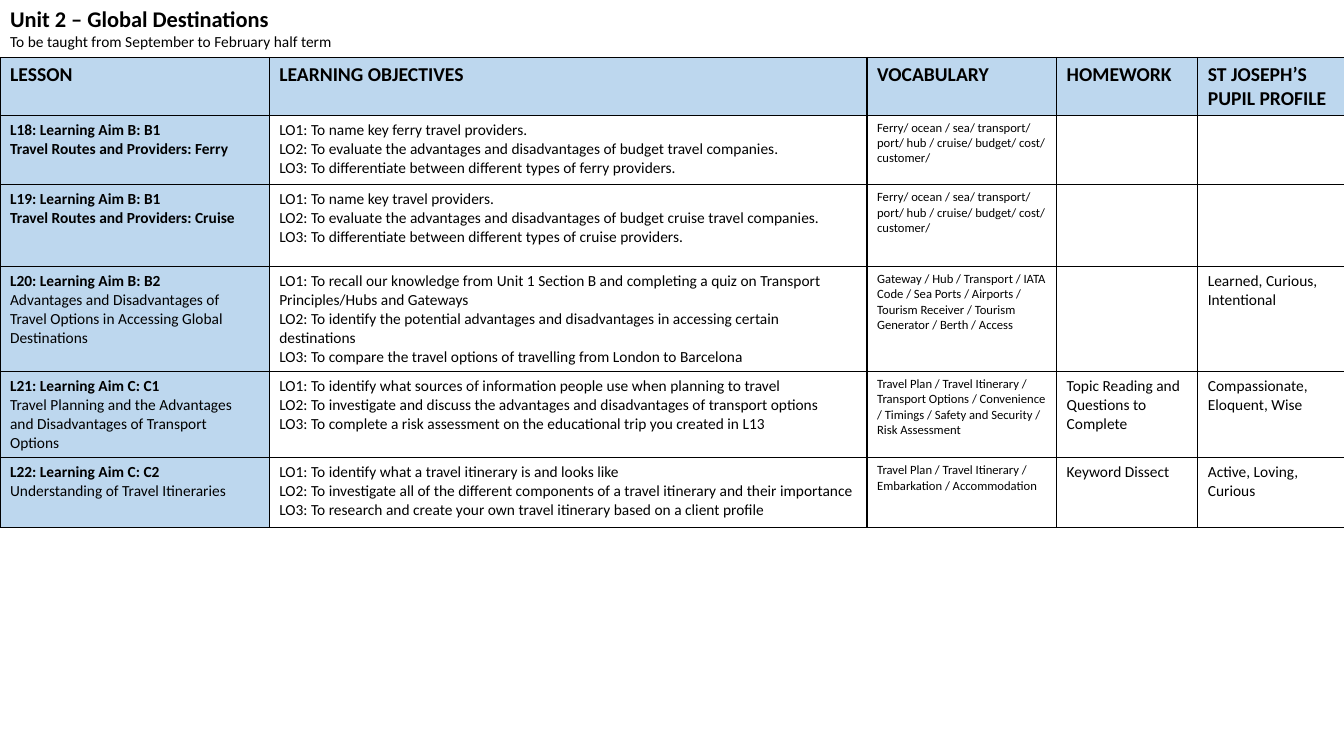
from dataclasses import dataclass

from lxml.etree import SubElement
from pptx import Presentation
from pptx.dml.color import RGBColor
from pptx.enum.text import MSO_ANCHOR, MSO_AUTO_SIZE, PP_ALIGN
from pptx.oxml import parse_xml
from pptx.oxml.ns import nsdecls, qn
from pptx.util import Inches, Pt


@dataclass(frozen=True)
class Theme:
    font: str = "Calibri"
    ink: str = "000000"
    header_fill: str = "BDD7EE"
    title_size: int = 16
    header_size: int = 14
    body_size: int = 11
    vocabulary_size: int = 9
    border_width: int = 1


@dataclass(frozen=True)
class Column:
    heading: str
    width: float


@dataclass(frozen=True)
class Lesson:
    code: str
    topic: str
    objectives: tuple[str, ...]
    vocabulary: str
    homework: str = ""
    profile: str = ""
    bold_topic: bool = False
    height: float = 0.69


THEME = Theme()
SLIDE_WIDTH, SLIDE_HEIGHT = 13.33, 7.5
HEADER_HEIGHT = 0.57
FERRY_WORDS = "Ferry/ ocean / sea/ transport/ port/ hub / cruise/ budget/ cost/ customer/"

COLUMNS = [
    Column("LESSON", 2.67),
    Column("LEARNING OBJECTIVES", 5.93),
    Column("VOCABULARY", 1.88),
    Column("HOMEWORK", 1.4),
    Column("ST JOSEPH’S PUPIL PROFILE", 1.46),
]

LESSONS = [
    Lesson(
        "L18: Learning Aim B: B1",
        "Travel Routes and Providers: Ferry",
        ("To name key ferry travel providers.",
         "To evaluate the advantages and disadvantages of budget travel companies.",
         "To differentiate between different types of ferry providers."),
        FERRY_WORDS,
        bold_topic=True,
    ),
    Lesson(
        "L19: Learning Aim B: B1",
        "Travel Routes and Providers: Cruise",
        ("To name key travel providers.",
         "To evaluate the advantages and disadvantages of budget cruise travel companies.",
         "To differentiate between different types of cruise providers."),
        FERRY_WORDS,
        bold_topic=True,
        height=0.81,
    ),
    Lesson(
        "L20: Learning Aim B: B2",
        "Advantages and Disadvantages of Travel Options in Accessing Global Destinations",
        ("To recall our knowledge from Unit 1 Section B and completing a quiz on "
         "Transport Principles/Hubs and Gateways",
         "To identify the potential advantages and disadvantages in accessing certain destinations",
         "To compare the travel options of travelling from London to Barcelona"),
        "Gateway / Hub / Transport / IATA Code / Sea Ports / Airports / Tourism Receiver / "
        "Tourism Generator / Berth / Access",
        profile="Learned, Curious, Intentional",
    ),
    Lesson(
        "L21: Learning Aim C: C1",
        "Travel Planning and the Advantages and Disadvantages of Transport Options",
        ("To identify what sources of information people use when planning to travel",
         "To investigate and discuss the advantages and disadvantages of transport options",
         "To complete a risk assessment on the educational trip you created in L13"),
        "Travel Plan / Travel Itinerary / Transport Options / Convenience / Timings / "
        "Safety and Security / Risk Assessment",
        "Topic Reading and Questions to Complete",
        "Compassionate, Eloquent, Wise",
    ),
    Lesson(
        "L22: Learning Aim C: C2",
        "Understanding of Travel Itineraries",
        ("To identify what a travel itinerary is and looks like",
         "To investigate all of the different components of a travel itinerary and their importance",
         "To research and create your own travel itinerary based on a client profile"),
        "Travel Plan / Travel Itinerary / Embarkation / Accommodation",
        "Keyword Dissect",
        "Active, Loving, Curious",
    ),
]


def format_paragraph(p, size: int, bold: bool = False) -> None:
    p.alignment = PP_ALIGN.LEFT
    for r in p.runs:
        r.font.name = THEME.font
        r.font.size = Pt(size)
        r.font.bold = bold
        r.font.color.rgb = RGBColor.from_string(THEME.ink)


def add_borders(cell) -> None:
    tc_pr = cell._tc.get_or_add_tcPr()
    for i, side in enumerate(("lnL", "lnR", "lnT", "lnB")):
        ln = parse_xml(f'<a:{side} {nsdecls("a")} w="{Pt(THEME.border_width)}"/>')
        fill = SubElement(ln, qn("a:solidFill"))
        SubElement(fill, qn("a:srgbClr"), val=THEME.ink)
        tc_pr.insert(i, ln)


def fill_cell(cell, text: str, size: int, bold: bool = False, shaded: bool = False) -> None:
    cell.text_frame.text = text
    for p in cell.text_frame.paragraphs:
        format_paragraph(p, size, bold)
    if shaded:
        cell.fill.solid()
        cell.fill.fore_color.rgb = RGBColor.from_string(THEME.header_fill)
    else:
        cell.fill.background()
    add_borders(cell)


def fill_lesson(cells, lesson: Lesson) -> None:
    name, objectives, vocabulary, homework, profile = cells
    fill_cell(name, f"{lesson.code}\n{lesson.topic}", THEME.body_size, True, True)
    format_paragraph(name.text_frame.paragraphs[1], THEME.body_size, lesson.bold_topic)
    numbered = (f"LO{n}: {text}" for n, text in enumerate(lesson.objectives, 1))
    fill_cell(objectives, "\n".join(numbered), THEME.body_size)
    fill_cell(vocabulary, lesson.vocabulary, THEME.vocabulary_size)
    fill_cell(homework, lesson.homework, THEME.body_size)
    fill_cell(profile, lesson.profile, THEME.body_size)


def add_title(s) -> None:
    title = s.shapes.title
    title.left, title.top = Inches(0), Inches(0)
    title.width, title.height = Inches(SLIDE_WIDTH), Inches(HEADER_HEIGHT)
    tf = title.text_frame
    tf.text = "Unit 2 – Global Destinations\nTo be taught from September to February half term"
    tf.word_wrap = True
    tf.auto_size = MSO_AUTO_SIZE.NONE
    tf.vertical_anchor = MSO_ANCHOR.TOP
    heading, dates = tf.paragraphs
    format_paragraph(heading, THEME.title_size, True)
    format_paragraph(dates, THEME.body_size)


def add_lesson_table(s) -> None:
    heights = [HEADER_HEIGHT] + [lesson.height for lesson in LESSONS]
    table = s.shapes.add_table(
        len(heights), len(COLUMNS), Inches(0), Inches(HEADER_HEIGHT),
        Inches(SLIDE_WIDTH), Inches(sum(heights)),
    ).table
    table.horz_banding = False
    for row, height in zip(table.rows, heights):
        row.height = Inches(height)
    for i, column in enumerate(COLUMNS):
        table.columns[i].width = Inches(column.width)
        fill_cell(table.cell(0, i), column.heading, THEME.header_size, True, True)
    for i, lesson in enumerate(LESSONS, 1):
        fill_lesson(table.rows[i].cells, lesson)


def main() -> None:
    prs = Presentation()
    prs.slide_width, prs.slide_height = Inches(SLIDE_WIDTH), Inches(SLIDE_HEIGHT)
    s = prs.slides.add_slide(prs.slide_layouts[5])
    add_title(s)
    add_lesson_table(s)
    prs.save("out.pptx")


if __name__ == "__main__":
    main()
